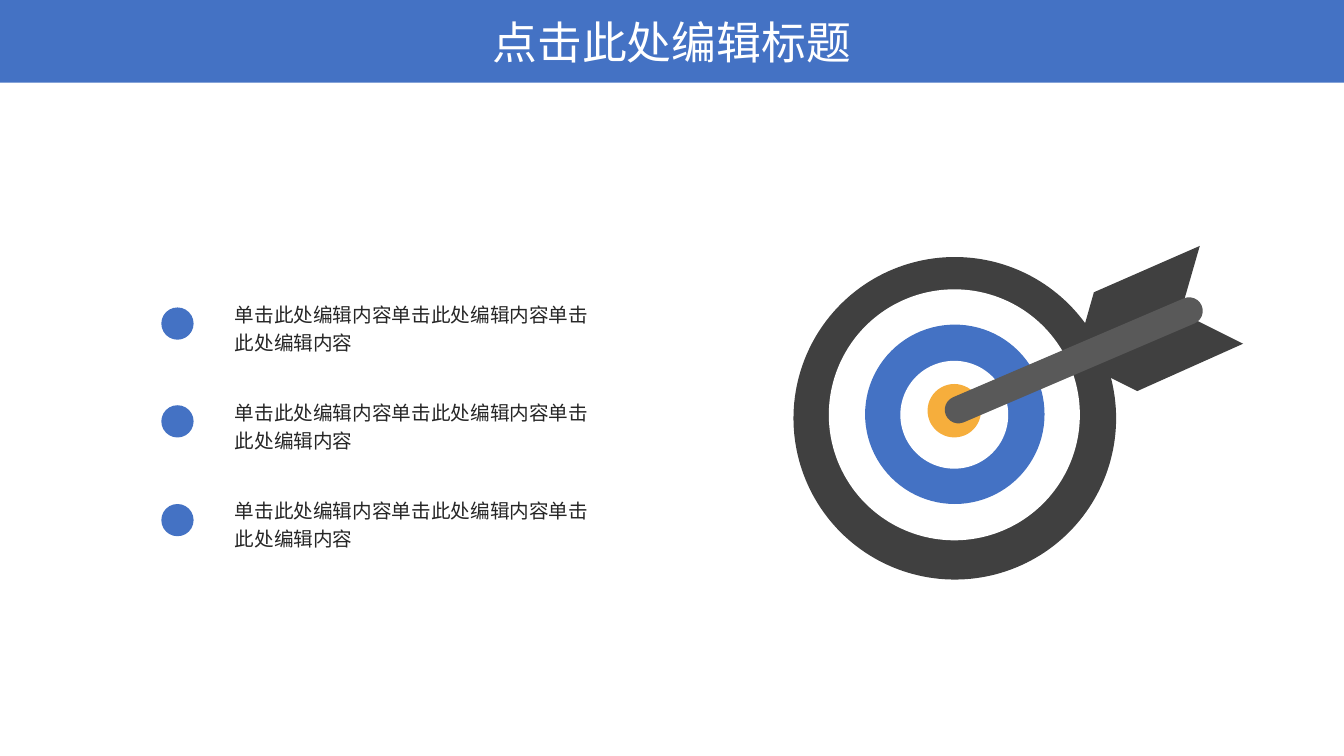
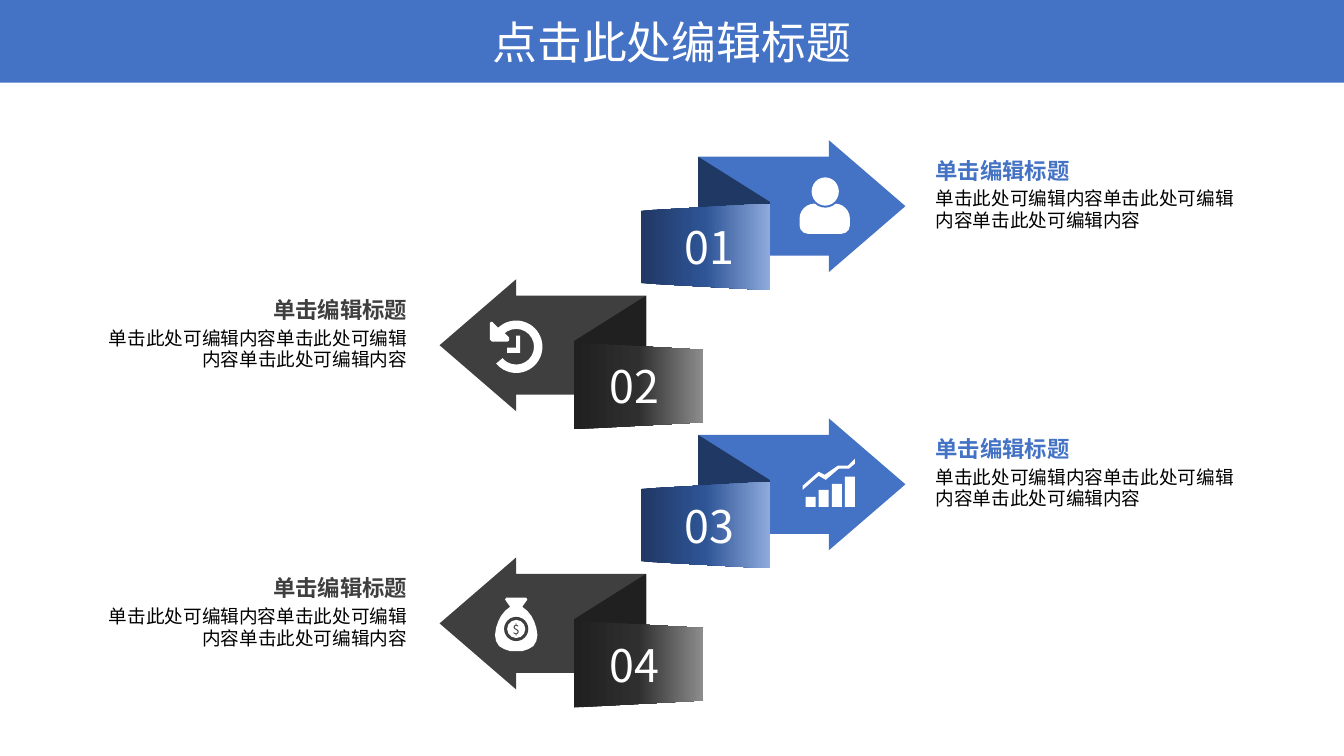
import copy

import pptx
import pptx.dml.color
import pptx.enum.shapes
import pptx.enum.text
import pptx.oxml.ns
import pptx.util
from lxml import etree

PX = 9144  # EMU; 100 px to the inch
FONT = "Noto Sans CJK SC"
RGB = pptx.dml.color.RGBColor
SHAPE = pptx.enum.shapes.MSO_SHAPE
ALIGN = pptx.enum.text.PP_ALIGN
ANCHOR = pptx.enum.text.MSO_ANCHOR

WHITE = RGB(0xFF, 0xFF, 0xFF)
BLACK = RGB(0x00, 0x00, 0x00)
BLUE = RGB(0x44, 0x72, 0xC4)
NAVY = RGB(0x20, 0x38, 0x64)
MID_BLUE = RGB(0x2F, 0x55, 0x97)
PALE_BLUE = RGB(0x8F, 0xAA, 0xDC)
CHARCOAL = RGB(0x3F, 0x3F, 0x3F)
NEAR_BLACK = RGB(0x20, 0x20, 0x20)
DARK_GREY = RGB(0x2F, 0x2F, 0x2F)
PALE_GREY = RGB(0x8C, 0x8C, 0x8C)
TARGET_GREY = RGB(0x40, 0x40, 0x40)
SHAFT_GREY = RGB(0x59, 0x59, 0x59)
BODY_GREY = RGB(0x26, 0x26, 0x26)
ORANGE = RGB(0xF6, 0xAE, 0x3C)


def draw(slide, form, colour, *box):
    """Draw a preset form in a px box, or an outline when form is a list of px points."""
    if isinstance(form, list):
        builder = slide.shapes.build_freeform(*form[0], scale=PX)
        builder.add_line_segments(form[1:])
        shape = builder.convert_to_shape()
    else:
        shape = slide.shapes.add_shape(form, *[value * PX for value in box])
    shape.shadow.inherit = False
    shape.fill.solid()
    shape.fill.fore_color.rgb = colour
    shape.line.fill.background()
    return shape


def write(paragraph, text, size, colour, align=ALIGN.CENTER, leading=None, bold=False):
    """Fill a paragraph; leading is its line height in points."""
    paragraph.text = text
    paragraph.alignment = align
    if leading:
        paragraph.line_spacing = pptx.util.Pt(leading)
    font = paragraph.font
    font.size = pptx.util.Pt(size)
    font.bold = bold
    font.color.rgb = colour
    font.name = FONT
    etree.SubElement(font._rPr, pptx.oxml.ns.qn("a:ea"), typeface=FONT)


prs = pptx.Presentation()
prs.slide_width = 1333 * PX
prs.slide_height = 750 * PX
title_only = prs.slide_layouts[5]
target_slide = prs.slides.add_slide(title_only)
arrows_slide = prs.slides.add_slide(title_only)

# Shared title band, kept on the layout
band = draw(target_slide, SHAPE.RECTANGLE, BLUE, 0, 0, 1333, 82)
title_only.shapes._spTree.insert(2, band._element)

for slide in (target_slide, arrows_slide):
    title = slide.shapes.title
    title.left, title.top, title.width, title.height = [v * PX for v in (466, 9, 401, 64)]
    title.text_frame.vertical_anchor = ANCHOR.MIDDLE
    write(title.text_frame.paragraphs[0], "点击此处编辑标题", 32, WHITE)

# Slide 1: target with an arrow
rings = [
    (787, 255, 320, TARGET_GREY),
    (822, 287, 249, WHITE),
    (858, 322, 178, BLUE),
    (893, 358, 107, WHITE),
    (920, 381, 53, ORANGE),
]
for left, top, size, colour in rings:
    draw(target_slide, SHAPE.OVAL, colour, left, top, size, size)

draw(target_slide, [(1066, 357), (1085, 290), (1190, 244), (1171, 310)], TARGET_GREY)
draw(target_slide, [(1066, 357), (1128, 388), (1233, 341), (1171, 310)], TARGET_GREY)
shaft = draw(target_slide, SHAPE.ROUNDED_RECTANGLE, SHAFT_GREY, 927, 344, 276, 27)
shaft.adjustments[0] = 0.5
shaft.rotation = -23.2

for row in range(3):
    top = 291 + row * 97.5
    draw(target_slide, SHAPE.OVAL, BLUE, 160, round(top + 14), 32, 32)
    point = target_slide.shapes.add_textbox(223 * PX, round(top) * PX, 388 * PX, 64 * PX)
    point.text_frame.word_wrap = True
    write(point.text_frame.paragraphs[0], "单击此处编辑内容" * 3, 14, BODY_GREY, ALIGN.LEFT, 20)

# Slide 2: folded ribbons pointing right and left in turn
for index in range(4):
    top = 139 + index * 138
    points_right = index % 2 == 0
    if points_right:
        colour, shade = BLUE, NAVY
        gradient = (NAVY, MID_BLUE, PALE_BLUE)
        arrow_form, arrow_left, shade_left, text_left = SHAPE.RIGHT_ARROW, 693, 662, 928
        align, fold_left, left_inset, right_inset = ALIGN.LEFT, 636, 7, 0
    else:
        colour, shade = CHARCOAL, NEAR_BLACK
        gradient = (NEAR_BLACK, DARK_GREY, PALE_GREY)
        arrow_form, arrow_left, shade_left, text_left = SHAPE.LEFT_ARROW, 436, 539, 96
        align, fold_left, left_inset, right_inset = ALIGN.RIGHT, 569, 0, 7

    arrow = draw(arrows_slide, arrow_form, colour, arrow_left, top, 205, 131)
    arrow.adjustments[0] = 0.75
    arrow.adjustments[1] = 0.58

    fold_shade = draw(arrows_slide, SHAPE.PARALLELOGRAM, shade, shade_left, top + 47, 132, 71)
    fold_shade.adjustments[0] = 0.63
    fold_shade.rotation = 90
    if not points_right:
        fold_shade._element.spPr.xfrm.set("flipV", "1")

    fold_top, fold_bottom, fold_right = top + 63, top + 149, fold_left + 128
    fold = draw(arrows_slide, [
        (fold_left, fold_top + left_inset),
        (fold_right, fold_top + right_inset),
        (fold_right, fold_bottom - right_inset),
        (fold_left, fold_bottom - left_inset),
    ], shade)
    fold.fill.gradient()
    fold.fill.gradient_angle = 0
    stop_list = fold._element.find(".//" + pptx.oxml.ns.qn("a:gsLst"))
    stop_list.append(copy.deepcopy(stop_list[0]))
    for stop, position, stop_colour in zip(fold.fill.gradient_stops, (0, 0.5, 1), gradient):
        stop.position = position
        stop.color.rgb = stop_colour
    frame = fold.text_frame
    frame.vertical_anchor = ANCHOR.MIDDLE
    frame.margin_left, frame.margin_right = left_inset * PX, right_inset * PX
    frame.margin_top = frame.margin_bottom = 0
    write(frame.paragraphs[0], f"0{index + 1}", 32, WHITE)

    caption = arrows_slide.shapes.add_textbox(text_left * PX, (top + 17) * PX, 308 * PX, 76 * PX)
    frame = caption.text_frame
    frame.word_wrap = True
    frame.margin_left = frame.margin_right = frame.margin_top = frame.margin_bottom = 0
    write(frame.paragraphs[0], "单击编辑标题", 16, colour, align, 19, bold=True)
    body = frame.add_paragraph()
    write(body, "单击此处可编辑内容" * 3, 13.3, BLACK, align, 15.5)
    body.space_before = pptx.util.Pt(3)

# Person icon
shoulders = draw(arrows_slide, SHAPE.ROUND_2_SAME_RECTANGLE, WHITE, 793, 202, 50, 30)
shoulders.adjustments[0] = 0.5
shoulders.adjustments[1] = 0.28
draw(arrows_slide, SHAPE.OVAL, BLUE, 803, 174, 31, 32)
draw(arrows_slide, SHAPE.OVAL, WHITE, 805, 176, 27, 28)

# Clock icon: ring from 225 to 140 degrees, arrowhead, hands
ring = draw(arrows_slide, SHAPE.BLOCK_ARC, WHITE, 486, 318, 52, 52)
for position, value in enumerate((225 * 0.6, 140 * 0.6, 0.16)):
    ring.adjustments[position] = value
draw(arrows_slide, [(486, 320), (488, 319), (494, 325), (500, 330), (505, 335),
                    (505, 338), (503, 339), (488, 339), (486, 337)], WHITE)
draw(arrows_slide, [(512, 333), (516, 333), (516, 350), (503, 350), (503, 345), (512, 345)], WHITE)

# Growth icon
for bar, bar_top in enumerate((493, 486, 480, 473)):
    draw(arrows_slide, SHAPE.RECTANGLE, WHITE, 799 + bar * 13, bar_top, 10, 503 - bar_top)
draw(arrows_slide, [(841, 462), (831, 462), (818, 471), (812, 468), (796, 482), (796, 486),
                    (812, 472), (819, 476), (832, 465), (842, 465), (848, 460), (848, 455)], WHITE)

# Money bag icon, mirrored about its middle
bag_half = [(10, 593), (11, 595), (6, 602), (11, 606), (15, 611), (18, 617), (20, 623),
            (21, 630), (20, 636), (17, 641), (12, 644), (6, 646)]
draw(arrows_slide, [(512 + dx, y) for dx, y in bag_half]
     + [(512 - dx, y) for dx, y in reversed(bag_half)], WHITE)
draw(arrows_slide, SHAPE.OVAL, CHARCOAL, 500, 612, 24, 24)
coin = draw(arrows_slide, SHAPE.OVAL, WHITE, 503, 615, 18, 18)
frame = coin.text_frame
frame.word_wrap = False
frame.vertical_anchor = ANCHOR.MIDDLE
frame.margin_left = frame.margin_right = frame.margin_top = frame.margin_bottom = 0
write(frame.paragraphs[0], "$", 9, CHARCOAL)

prs.save("out.pptx")
